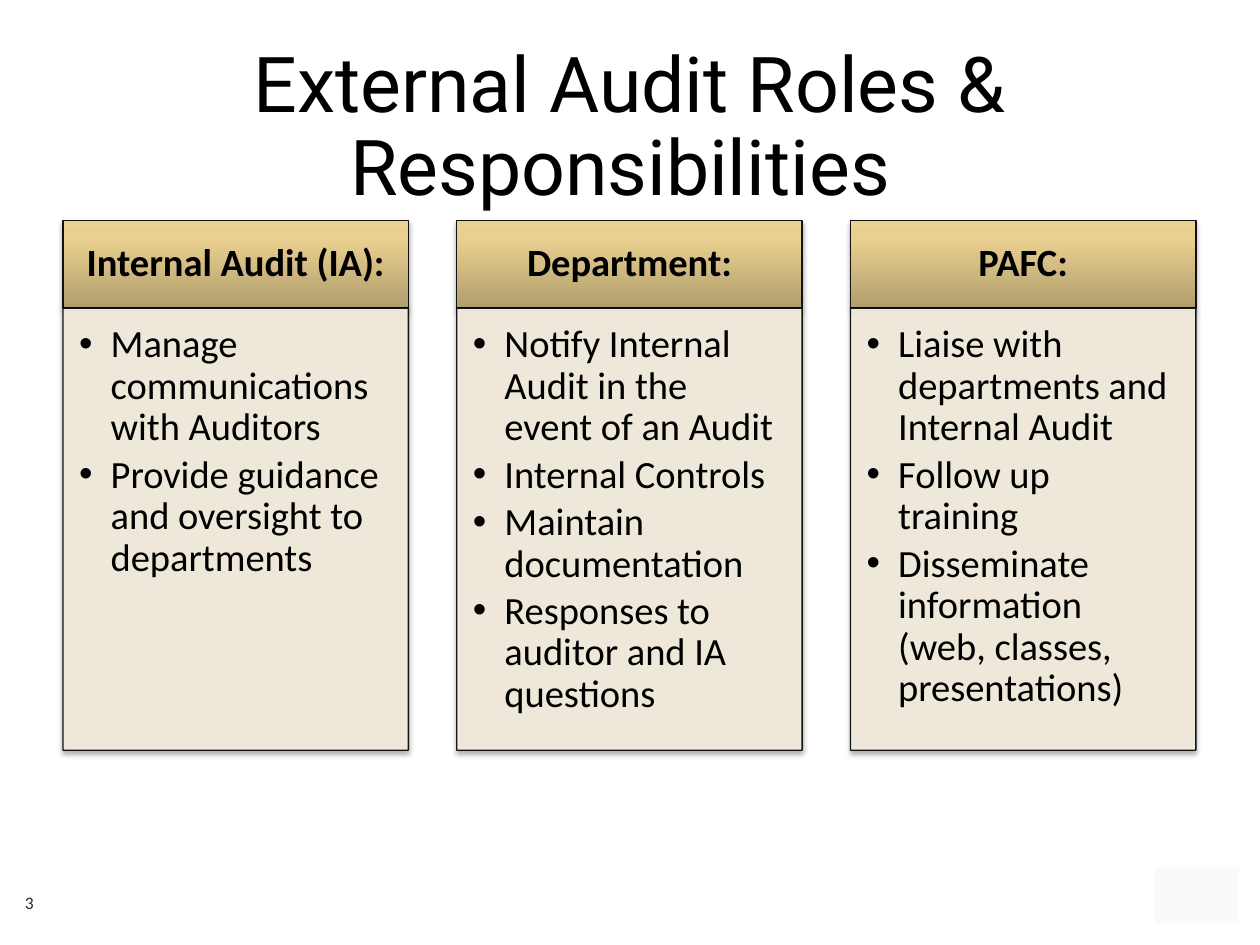
from dataclasses import dataclass

from lxml import etree
from pptx import Presentation
from pptx.dml.color import RGBColor
from pptx.enum.shapes import MSO_SHAPE
from pptx.enum.text import MSO_ANCHOR, PP_ALIGN
from pptx.oxml import parse_xml
from pptx.oxml.ns import nsdecls, qn
from pptx.util import Pt

RECTANGLE = MSO_SHAPE.RECTANGLE
TOP, MIDDLE = MSO_ANCHOR.TOP, MSO_ANCHOR.MIDDLE
LEFT, CENTER = PP_ALIGN.LEFT, PP_ALIGN.CENTER

COLORS = {
    "text": "000000",
    "number": "2A2A2D",
    "header_line": "121213",
    "gold_dark": "B19E6E",
    "gold": "EAD090",
    "gold_light": "EDD28F",
    "body": "F6EFDF",
    "corner": "F2F2F2",
}

# Column grid, in points
COLUMN_LEFT, COLUMN_PITCH, COLUMN_WIDTH = 36, 225, 197.4
HEADER_TOP, HEADER_HEIGHT, BODY_HEIGHT = 126.1, 50, 252.6


@dataclass
class Column:
    heading: str
    duties: list[str]


COLUMNS = [
    Column("Internal Audit (IA):", [
        "Manage communications with Auditors",
        "Provide guidance and oversight to departments",
    ]),
    Column("Department:", [
        "Notify Internal Audit in the event of an Audit",
        "Internal Controls",
        "Maintain documentation",
        "Responses to auditor and IA questions",
    ]),
    Column("PAFC:", [
        "Liaise with departments and Internal Audit",
        "Follow up training",
        "Disseminate information (web, classes, presentations)",
    ]),
]


def add_bullet(paragraph) -> None:
    properties = paragraph._p.get_or_add_pPr()
    properties.set("marL", str(Pt(18)))
    properties.set("indent", str(Pt(-18)))
    color = etree.SubElement(properties, qn("a:buClr"))
    etree.SubElement(color, qn("a:srgbClr"), val=COLORS["text"])
    etree.SubElement(properties, qn("a:buFont"), typeface="Arial")
    etree.SubElement(properties, qn("a:buChar"), char="•")


def write_text(shape, lines: list[str], *, size: float, font: str = "Calibri",
               color: str = "text", bold: bool = False, align=LEFT, anchor=MIDDLE,
               insets: tuple = (7.2, 3.6, 7.2, 3.6), line_spacing: float = 0.9,
               bullets: bool = False) -> None:
    frame = shape.text_frame
    frame.word_wrap = True
    frame.vertical_anchor = anchor
    (frame.margin_left, frame.margin_top,
     frame.margin_right, frame.margin_bottom) = map(Pt, insets)
    for index, line in enumerate(lines):
        paragraph = frame.add_paragraph() if index else frame.paragraphs[0]
        if bullets:
            add_bullet(paragraph)
        paragraph.alignment = align
        paragraph.line_spacing = line_spacing
        if index:
            paragraph.space_before = Pt(3.3)
        run = paragraph.add_run()
        run.text = line
        run.font.name = font
        run.font.size = Pt(size)
        run.font.bold = bold
        run.font.color.rgb = RGBColor.from_string(COLORS[color])


def add_text_box(slide, left: float, top: float, width: float, height: float):
    return slide.shapes.add_textbox(Pt(left), Pt(top), Pt(width), Pt(height))


def set_alpha(fill, percent: int) -> None:
    color = fill._xPr.find(qn("a:solidFill"))[0]
    etree.SubElement(color, qn("a:alpha"), val=str(percent * 1000))


def add_rectangle(slide, left: float, top: float, width: float, height: float,
                  fill: str, alpha: int = 100, line: str | None = None):
    shape = slide.shapes.add_shape(RECTANGLE, Pt(left), Pt(top), Pt(width), Pt(height))
    shape.shadow.inherit = False
    shape.fill.solid()
    shape.fill.fore_color.rgb = RGBColor.from_string(COLORS[fill])
    set_alpha(shape.fill, alpha)
    if line is None:
        shape.line.fill.background()
    else:
        shape.line.width = Pt(0.75)
        shape.line.color.rgb = RGBColor.from_string(COLORS[line])
        set_alpha(shape.line.fill, alpha)
    return shape


def add_shadow(shape) -> None:
    effects = shape._element.spPr.find(qn("a:effectLst"))
    effects.append(parse_xml(
        f'<a:outerShdw {nsdecls("a")} blurRad="{Pt(3.1)}" dist="{Pt(1.8)}" '
        'dir="5400000" rotWithShape="0"><a:srgbClr val="000000">'
        '<a:alpha val="35000"/></a:srgbClr></a:outerShdw>'))


def set_gold_gradient(shape) -> None:
    stops = [(0, "gold_dark"), (80, "gold"), (100, "gold_light")]
    stop_xml = "".join(
        f'<a:gs pos="{position * 1000}"><a:srgbClr val="{COLORS[name]}"/></a:gs>'
        for position, name in stops)
    properties = shape._element.spPr
    properties.replace(properties.find(qn("a:solidFill")), parse_xml(
        f'<a:gradFill {nsdecls("a")} rotWithShape="1"><a:gsLst>{stop_xml}</a:gsLst>'
        '<a:lin ang="16200000" scaled="0"/></a:gradFill>'))


def add_column(slide, left: float, column: Column) -> None:
    header = add_rectangle(slide, left, HEADER_TOP, COLUMN_WIDTH, HEADER_HEIGHT,
                           "gold", line="header_line")
    set_gold_gradient(header)
    add_shadow(header)
    write_text(header, [column.heading], size=22, bold=True, align=CENTER,
               insets=(12.4, 7.1, 12.4, 7.1))

    body = add_rectangle(slide, left, HEADER_TOP + HEADER_HEIGHT, COLUMN_WIDTH,
                         BODY_HEIGHT, "body", alpha=90, line="text")
    add_shadow(body)
    write_text(body, column.duties, size=22, anchor=TOP, bullets=True,
               insets=(9.3, 9.3, 12.4, 14))


def main() -> None:
    presentation = Presentation()
    presentation.slide_width, presentation.slide_height = Pt(720), Pt(540)
    slide = presentation.slides.add_slide(presentation.slide_layouts[6])

    # Corner block
    add_rectangle(slide, 660, 495.4, 48, 32.4, "corner", alpha=35)

    # Title; its trailing space takes part in the centring
    title = add_text_box(slide, 36, 21.6, 648, 104.4)
    write_text(title, ["External Audit Roles & Responsibilities "], size=44,
               font="Roboto", align=CENTER)

    # Role columns
    for index, column in enumerate(COLUMNS):
        add_column(slide, COLUMN_LEFT + index * COLUMN_PITCH, column)

    # Slide number
    number = add_text_box(slide, 7.2, 506.2, 31.7, 19.4)
    write_text(number, ["3"], size=10, color="number", line_spacing=1.0)

    presentation.save("out.pptx")


if __name__ == "__main__":
    main()
